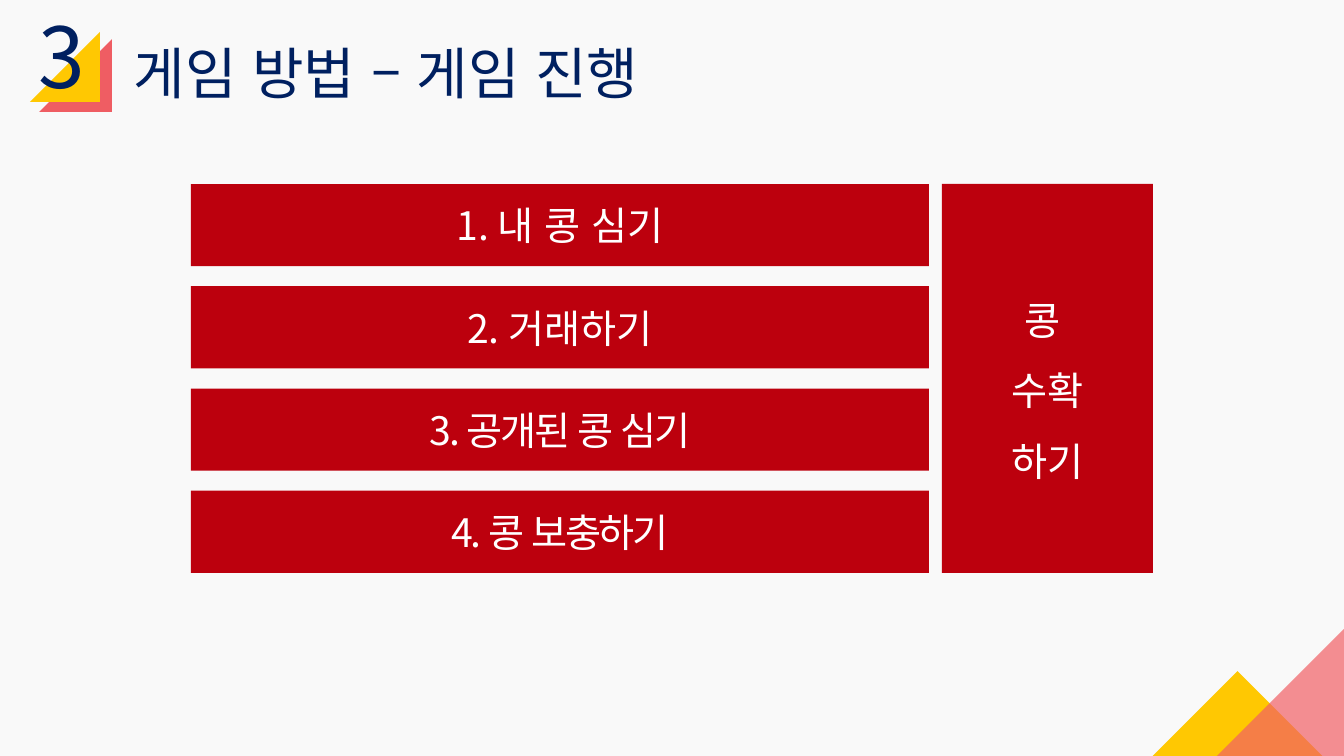
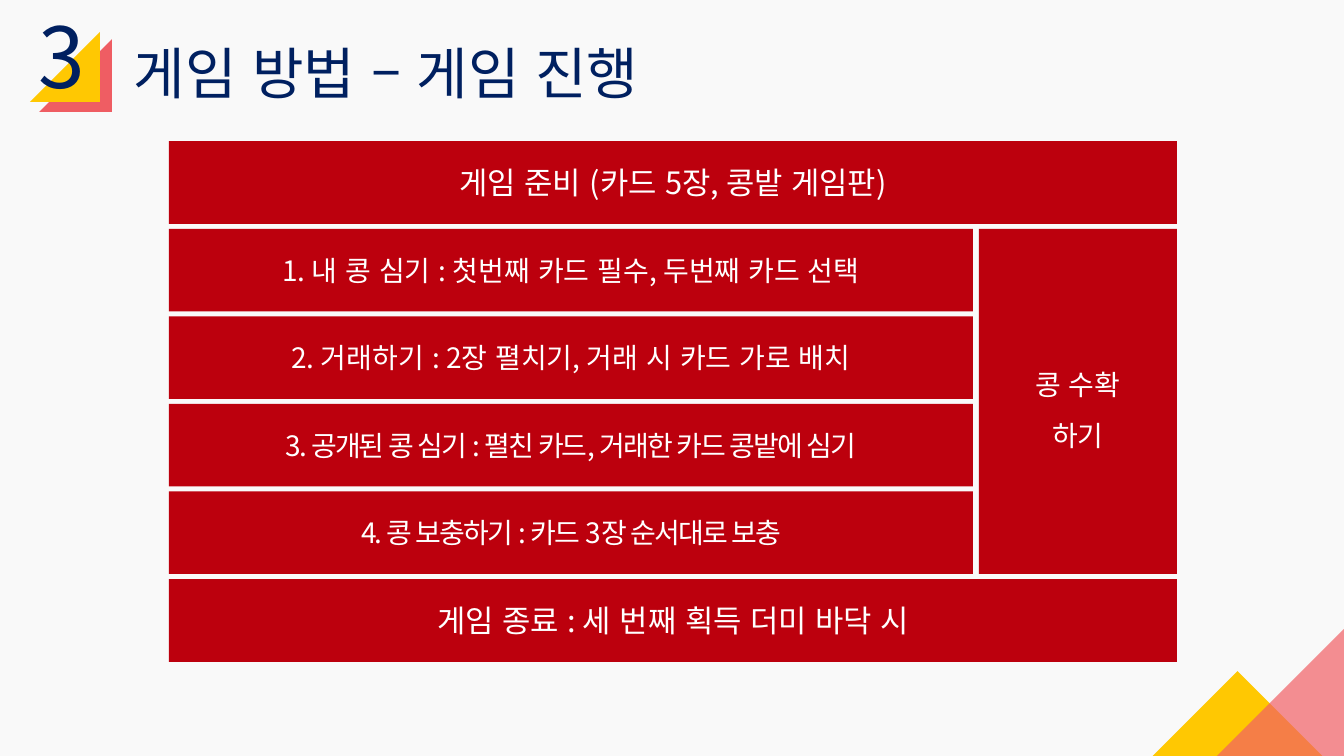
from collections import namedtuple
from dataclasses import dataclass

from lxml import etree
from pptx import Presentation
from pptx import util as u
from pptx.dml.color import RGBColor
from pptx.enum import lang, shapes, text
from pptx.oxml import ns

EMU_PER_PX = 914400 / 100.8
Box = namedtuple("Box", "left top width height")


@dataclass(frozen=True)
class Theme:
    font: str = "Noto Sans CJK KR"
    paper: str = "F9F9F9"
    navy: str = "002060"
    white: str = "FFFFFF"
    panel: str = "BC000D"
    yellow: str = "FFC802"
    red: str = "EB1C24"
    coral: str = "F16065"
    number_size: int = 60
    title_size: int = 40
    overview_size: int = 28
    banner_size: int = 22
    detail_size: int = 20
    tight: float = -1.5
    line_spacing: float = 1.5


THEME = Theme()


def emu(box):
    return [u.Emu(round(px * EMU_PER_PX)) for px in box]


def write(frame, words, size, color, spacing=0):
    """Put words in the frame and style every run, including its Korean font."""
    frame.text = words
    for paragraph in frame.paragraphs:
        for run in paragraph.runs:
            run.font.name = THEME.font
            run.font.size = u.Pt(size)
            run.font.color.rgb = RGBColor.from_string(color)
            run.font.language_id = lang.MSO_LANGUAGE_ID.KOREAN
            properties = run.font._element
            etree.SubElement(properties, ns.qn("a:ea"), typeface=THEME.font)
            if spacing:
                properties.set("spc", str(round(spacing * 100)))


def filled_shape(parent, kind, box, color):
    shape = parent.shapes.add_shape(kind, *emu(box))
    shape.shadow.inherit = False
    shape.fill.solid()
    shape.fill.fore_color.rgb = RGBColor.from_string(color)
    shape.line.fill.background()
    return shape


def triangle(parent, left, top, side, rotation, color, opacity=100):
    corner = filled_shape(parent, shapes.MSO_SHAPE.RIGHT_TRIANGLE,
                          Box(left, top, side, side), color)
    corner.rotation = rotation
    if opacity < 100:
        tint = corner._element.spPr.find(".//" + ns.qn("a:srgbClr"))
        etree.SubElement(tint, ns.qn("a:alpha"), val=str(opacity * 1000))


def panel(slide, box, words, size, spacing=0, line_spacing=None):
    bar = filled_shape(slide, shapes.MSO_SHAPE.RECTANGLE, box, THEME.panel)
    frame = bar.text_frame
    frame.word_wrap = True
    frame.vertical_anchor = text.MSO_ANCHOR.MIDDLE
    write(frame, words, size, THEME.white, spacing)
    for paragraph in frame.paragraphs:
        paragraph.alignment = text.PP_ALIGN.CENTER
        if line_spacing:
            paragraph.line_spacing = line_spacing


def heading(slide, box, words, size):
    label = slide.shapes.add_textbox(*emu(box)).text_frame
    label.word_wrap = True
    label.auto_size = text.MSO_AUTO_SIZE.SHAPE_TO_FIT_TEXT
    write(label, words, size, THEME.navy)


def section_slide(deck, number, title):
    """Add a slide with the section badge, corner ornament and title."""
    slide = deck.slides.add_slide(deck.slide_layouts[6])
    badge = slide.shapes.add_group_shape()
    triangle(badge, 39, 39, 73, 270, THEME.red, 70)
    triangle(badge, 30, 32, 70, 270, THEME.yellow)
    ornament = slide.shapes.add_group_shape()
    triangle(ornament, 1175, 697, 125, 135, THEME.yellow)
    triangle(ornament, 1214, 629, 130, 270, THEME.coral, 70)
    heading(slide, Box(29, 0, 95, 112), number, THEME.number_size)
    heading(slide, Box(124, 34, 593, 78), title, THEME.title_size)
    return slide


def step_grid(slide, box, steps, harvest, harvest_width, row_gap, column_gap, size):
    """Stack the steps on the left, with the harvest panel beside them all."""
    step_width = box.width - harvest_width - column_gap
    step_height = (box.height - row_gap * (len(steps) - 1)) / len(steps)
    for row, (words, spacing) in enumerate(steps):
        top = box.top + row * (step_height + row_gap)
        panel(slide, Box(box.left, top, step_width, step_height), words, size, spacing)
    harvest_left = box.left + step_width + column_gap
    panel(slide, Box(harvest_left, box.top, harvest_width, box.height),
          harvest, size, line_spacing=THEME.line_spacing)


def game_flow(slide, box, opening, closing, steps, harvest):
    """Frame the step grid with an opening and a closing banner."""
    banner_height, gap = 83, 5
    banner_tops = (box.top, box.top + box.height - banner_height)
    for top, words in zip(banner_tops, (opening, closing)):
        panel(slide, Box(box.left, top, box.width, banner_height),
              words, THEME.banner_size)
    inset = banner_height + gap
    grid = Box(box.left, box.top + inset, box.width, box.height - 2 * inset)
    step_grid(slide, grid, steps, harvest, harvest_width=198,
              row_gap=gap, column_gap=6, size=THEME.detail_size)


def main():
    deck = Presentation()
    deck.slide_width, deck.slide_height = emu((1344, 756))
    background = deck.slide_master.background.fill
    background.solid()
    background.fore_color.rgb = RGBColor.from_string(THEME.paper)

    section = ("3", "게임 방법 – 게임 진행")
    overview = section_slide(deck, *section)
    step_grid(overview, Box(191, 184, 962, 389), [
        ("1. 내 콩 심기", 0),
        ("2. 거래하기", 0),
        ("3. 공개된 콩 심기", THEME.tight),
        ("4. 콩 보충하기", THEME.tight),
    ], "콩 \n수확\n하기", harvest_width=211, row_gap=20, column_gap=13,
        size=THEME.overview_size)

    details = section_slide(deck, *section)
    game_flow(details, Box(169, 141, 1008, 521),
              "게임 준비 (카드 5장, 콩밭 게임판)",
              "게임 종료 : 세 번째 획득 더미 바닥 시", [
                  ("1. 내 콩 심기 : 첫번째 카드 필수, 두번째 카드 선택", 0),
                  ("2. 거래하기 : 2장 펼치기, 거래 시 카드 가로 배치", 0),
                  ("3. 공개된 콩 심기 : 펼친 카드, 거래한 카드 콩밭에 심기", THEME.tight),
                  ("4. 콩 보충하기 : 카드 3장 순서대로 보충", THEME.tight),
              ], "콩 수확\n하기")

    deck.save("out.pptx")


if __name__ == "__main__":
    main()
